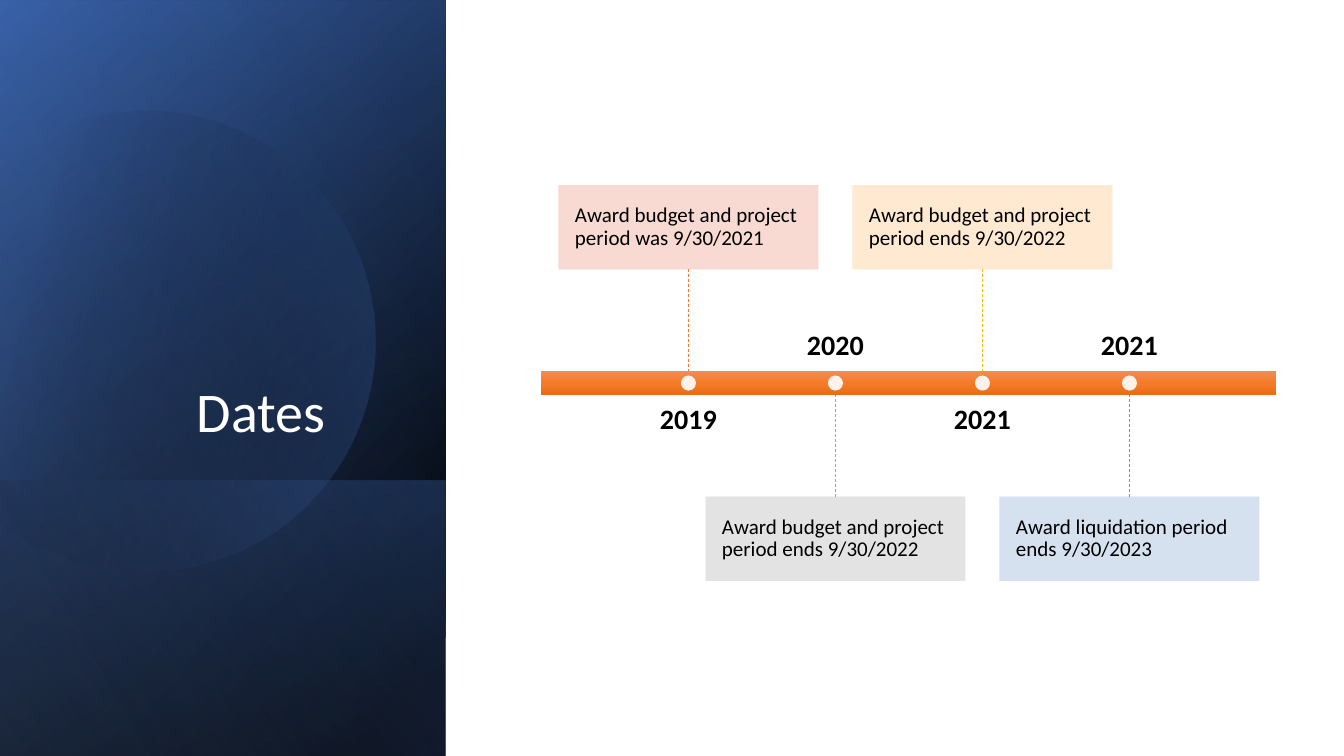
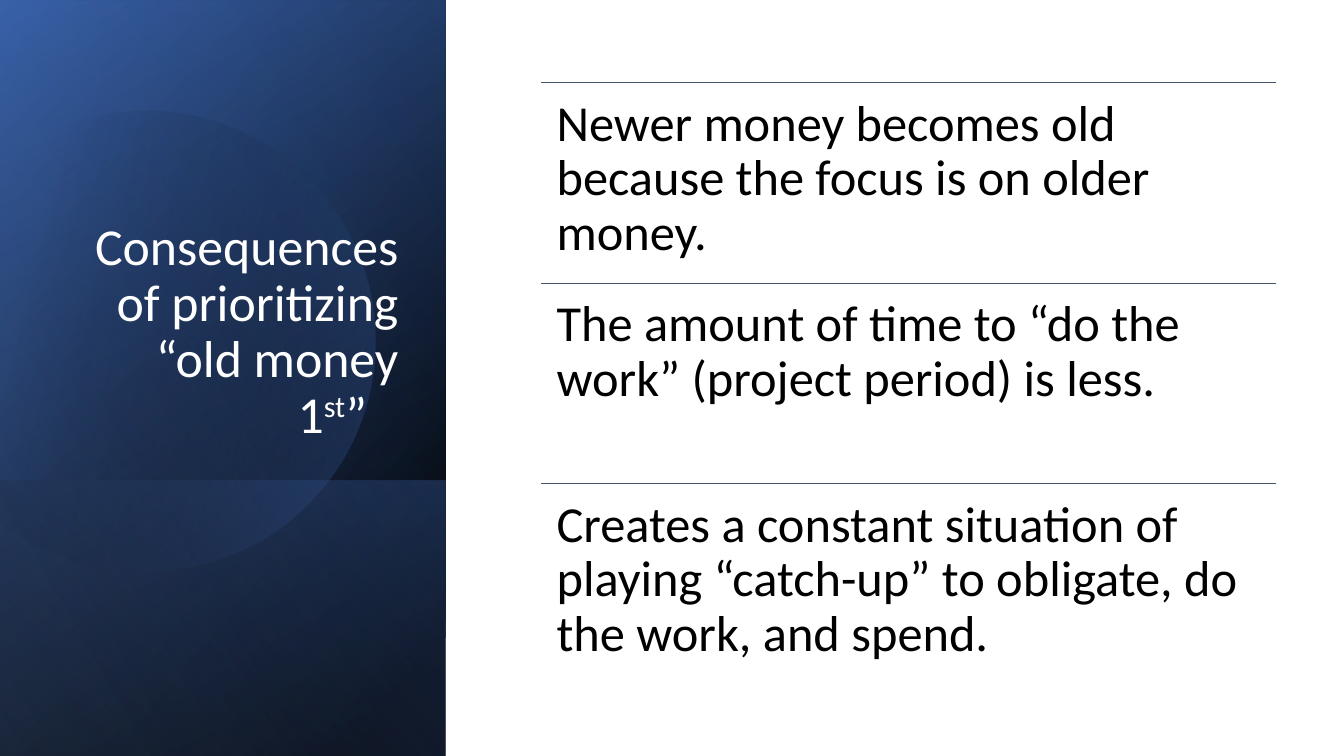
from math import cos, radians, sin

from lxml.etree import SubElement
from pptx import Presentation
from pptx.dml.color import RGBColor
from pptx.enum.dml import MSO_LINE
from pptx.enum.shapes import MSO_CONNECTOR, MSO_SHAPE
from pptx.enum.text import MSO_ANCHOR, PP_ALIGN
from pptx.oxml import parse_xml
from pptx.oxml.ns import nsdecls, qn
from pptx.util import Inches, Pt

FONT = "Calibri"
BLACK = RGBColor(0x00, 0x00, 0x00)
WHITE = RGBColor(0xFF, 0xFF, 0xFF)
NAVY = RGBColor(0x2F, 0x55, 0x97)
BLUE = RGBColor(0x44, 0x72, 0xC4)
LIGHT_BLUE = RGBColor(0x8F, 0xAA, 0xDC)
SLATE = RGBColor(0x44, 0x54, 0x6A)
ORANGE_TOP = RGBColor(0xF1, 0x8C, 0x57)
ORANGE_MIDDLE = RGBColor(0xF6, 0x7B, 0x28)
ORANGE_BOTTOM = RGBColor(0xE5, 0x6C, 0x19)
ORANGE = RGBColor(0xED, 0x7D, 0x31)
GRAY = RGBColor(0xA5, 0xA5, 0xA5)
GOLD = RGBColor(0xFF, 0xC0, 0x00)
SKY = RGBColor(0x5B, 0x9B, 0xD5)
PALE_ORANGE = RGBColor(0xF8, 0xD7, 0xCE)
PALE_GRAY = RGBColor(0xE1, 0xE1, 0xE1)
PALE_GOLD = RGBColor(0xFF, 0xE8, 0xCC)
PALE_SKY = RGBColor(0xD2, 0xDE, 0xEF)

CONTENT_LEFT, CONTENT_WIDTH = 5.37, 7.29
BAR_TOP, BAR_HEIGHT = 3.68, 0.24
CARD_WIDTH, CARD_HEIGHT = 2.57, 0.83
UPPER_CARD_TOP, LOWER_CARD_TOP = 1.84, 4.93
YEAR_WIDTH, YEAR_HEIGHT = 2.33, 0.67
UPPER_YEAR_TOP, LOWER_YEAR_TOP = 2.92, 4.02
DOT_SIZE = 0.15
ROW_TOP, ROW_HEIGHT = 0.82, 1.99

MILESTONES = [
    ("2019", "Award budget and project period was 9/30/2021", PALE_ORANGE, ORANGE),
    ("2020", "Award budget and project period ends 9/30/2022", PALE_GRAY, GRAY),
    ("2021", "Award budget and project period ends 9/30/2022", PALE_GOLD, GOLD),
    ("2021", "Award liquidation period ends 9/30/2023", PALE_SKY, SKY),
]
CONSEQUENCES = [
    "Newer money becomes old because the focus is on older money.",
    "The amount of time to “do the work” (project period) is less.",
    "Creates a constant situation of playing “catch-up” to obligate, do the work, and spend.",
]
PANEL_LAYERS = [
    (-1.54, 1.54, 7.5, [(8, BLACK, 100), (100, NAVY, 100)], 50),
    (-1.54, 1.55, 7.5, [(0, BLACK, 0), (99, BLUE, 46)], 30),
    (0.84, 3.93, 2.74, [(2, BLUE, 29), (100, BLACK, 30)], 130),
]
PANEL_GLOW = (-1.54, 1.54, 7.5, [(0, BLACK, 0), (99, LIGHT_BLUE, 11)], 120)
PANEL_WIDTH = 4.42
DISC_CENTER = (1.58, 3.34)
DISC_TURN = -16.1
DISC_START = (1.49, 1.1)
DISC_SEGMENTS = [
    [(2.46, 1.12), (3.35, 1.77), (3.63, 2.75)],
    [(3.98, 3.97), (3.28, 5.23), (2.07, 5.58)],
    [(1.31, 5.8), (0.53, 5.61), (-0.03, 5.14)],
    [(-0.15, 5.03)],
    [(-0.15, 1.75)],
    [(0, 1.61)],
    [(0.23, 1.42), (0.5, 1.28), (0.8, 1.19)],
    [(1.03, 1.13), (1.26, 1.1), (1.49, 1.1)],
]


def fill_gradient(shape, stops, angle):
    stop_xml = "".join(
        f'<a:gs pos="{position * 1000}"><a:srgbClr val="{color}">'
        f'<a:alpha val="{opacity * 1000}"/></a:srgbClr></a:gs>'
        for position, color, opacity in stops
    )
    gradient = parse_xml(
        f'<a:gradFill {nsdecls("a")} rotWithShape="1"><a:gsLst>{stop_xml}</a:gsLst>'
        f'<a:lin ang="{angle * 60000}" scaled="0"/></a:gradFill>'
    )
    shape.element.spPr[1].addnext(gradient)
    shape.line.fill.background()
    shape.shadow.inherit = False


def set_opacity(shape, percent):
    for color in shape.element.spPr.iter(qn("a:srgbClr")):
        SubElement(color, qn("a:alpha"), val=str(percent * 1000))


def add_block(page, kind, left, top, width, height, color=None, outline=None):
    block = page.shapes.add_shape(kind, Inches(left), Inches(top), Inches(width), Inches(height))
    block.shadow.inherit = False
    if color is not None:
        block.fill.solid()
        block.fill.fore_color.rgb = color
    if outline is None:
        block.line.fill.background()
    else:
        block.line.color.rgb = outline
        block.line.width = Pt(0.5)
    return block


def add_text_box(page, left, top, width, height):
    return page.shapes.add_textbox(Inches(left), Inches(top), Inches(width), Inches(height))


def write_text(box, text, size, color=BLACK, bold=False, align=PP_ALIGN.LEFT,
               anchor=MSO_ANCHOR.TOP, inset=(0, 0), superscript="", tail=""):
    frame = box.text_frame
    frame.word_wrap = True
    frame.vertical_anchor = anchor
    frame.margin_left = frame.margin_right = Inches(inset[0])
    frame.margin_top = frame.margin_bottom = Inches(inset[1])
    para = frame.paragraphs[0]
    para.alignment = align
    para.line_spacing = 0.9
    para._p.get_or_add_pPr().set("defTabSz", str(Inches(1)))
    first, *rest = text.split("\n")
    pieces = [(first, 0), *((line, 0) for line in rest), (superscript, 30), (tail, 0)]
    for index, (content, baseline) in enumerate(pieces):
        if 0 < index <= len(rest):
            para.add_line_break()
        if content:
            span = para.add_run()
            span.text = content
            span.font.name = FONT
            span.font.size = Pt(size)
            span.font.bold = bold
            span.font.color.rgb = color
            if baseline:
                span.font._element.set("baseline", str(baseline * 1000))


def add_line(page, start, end, color, dash=None):
    line = page.shapes.add_connector(
        MSO_CONNECTOR.STRAIGHT, *(Inches(value) for value in (*start, *end)))
    line.line.color.rgb = color
    line.line.width = Pt(0.5)
    if dash is not None:
        line.line.dash_style = dash
    SubElement(line.element.spPr, qn("a:effectLst"))
    return line


def add_panel_layer(page, left, top, length, stops, angle):
    layer = add_block(page, MSO_SHAPE.RECTANGLE, left, top, length, PANEL_WIDTH)
    layer.rotation = 90
    layer.element.spPr.xfrm.set("flipH", "1")
    fill_gradient(layer, stops, angle)


def turn(point, degrees):
    center_x, center_y = (Inches(value) for value in DISC_CENTER)
    x, y = point[0] - center_x, point[1] - center_y
    cosine, sine = cos(radians(degrees)), sin(radians(degrees))
    return (round(center_x + x * cosine - y * sine),
            round(center_y + x * sine + y * cosine))


def bend_segments(shape):
    outline = next(shape.element.iter(qn("a:path")))
    lines = iter(outline.findall(qn("a:lnTo")))
    for segment in DISC_SEGMENTS:
        first, *others = [next(lines) for _ in segment]
        if others:
            first.tag = qn("a:cubicBezTo")
            for other in others:
                first.append(other[0])
                outline.remove(other)


def add_disc(page):
    start, *points = [
        turn((Inches(x), Inches(y)), -DISC_TURN)
        for x, y in [DISC_START, *(point for segment in DISC_SEGMENTS for point in segment)]
    ]
    builder = page.shapes.build_freeform(*start)
    builder.add_line_segments(points, close=True)
    disc = builder.convert_to_shape()
    bend_segments(disc)
    center_x, center_y = turn((disc.left + disc.width / 2, disc.top + disc.height / 2), DISC_TURN)
    disc.left = round(center_x - disc.width / 2)
    disc.top = round(center_y - disc.height / 2)
    disc.rotation = DISC_TURN
    fill_gradient(disc, [(29, BLACK, 0), (100, BLUE, 43)], 30)


def add_page(deck, title, size, **title_parts):
    page = deck.slides.add_slide(deck.slide_layouts[6])
    for layer in PANEL_LAYERS:
        add_panel_layer(page, *layer)
    add_disc(page)
    add_panel_layer(page, *PANEL_GLOW)
    write_text(add_text_box(page, 0.64, 1.84, 3.41, 2.62), title, size, color=WHITE,
               align=PP_ALIGN.RIGHT, anchor=MSO_ANCHOR.BOTTOM, inset=(0.1, 0.05), **title_parts)
    return page


def add_milestone(page, center, upper, year, text, color, accent):
    card_top = UPPER_CARD_TOP if upper else LOWER_CARD_TOP
    card = add_block(page, MSO_SHAPE.RECTANGLE, center - CARD_WIDTH / 2, card_top,
                     CARD_WIDTH, CARD_HEIGHT, color, outline=color)
    set_opacity(card, 90)
    write_text(card, text, 15, anchor=MSO_ANCHOR.MIDDLE, inset=(0.16, 0.16))

    card_edge = card_top + CARD_HEIGHT if upper else card_top
    bar_edge = BAR_TOP if upper else BAR_TOP + BAR_HEIGHT
    stem = add_line(page, (center, card_edge), (center, bar_edge), accent, MSO_LINE.DASH)
    stem.begin_connect(card, 2 if upper else 0)

    year_box = add_text_box(page, center - YEAR_WIDTH / 2,
                            LOWER_YEAR_TOP if upper else UPPER_YEAR_TOP, YEAR_WIDTH, YEAR_HEIGHT)
    write_text(year_box, year, 20, bold=True, align=PP_ALIGN.CENTER,
               anchor=MSO_ANCHOR.TOP if upper else MSO_ANCHOR.BOTTOM)

    dot = add_block(page, MSO_SHAPE.OVAL, center - DOT_SIZE / 2,
                    BAR_TOP + (BAR_HEIGHT - DOT_SIZE) / 2, DOT_SIZE, DOT_SIZE, WHITE)
    set_opacity(dot, 90)


def add_timeline(page):
    bar = add_block(page, MSO_SHAPE.RECTANGLE, CONTENT_LEFT, BAR_TOP, CONTENT_WIDTH, BAR_HEIGHT)
    fill_gradient(bar, [(0, ORANGE_TOP, 100), (50, ORANGE_MIDDLE, 100),
                        (100, ORANGE_BOTTOM, 100)], 90)
    step = CONTENT_WIDTH / (len(MILESTONES) + 1)
    for index, milestone in enumerate(MILESTONES):
        add_milestone(page, CONTENT_LEFT + step * (index + 1), index % 2 == 0, *milestone)


def add_consequences(page):
    for index, text in enumerate(CONSEQUENCES):
        top = ROW_TOP + index * ROW_HEIGHT
        add_line(page, (CONTENT_LEFT, top), (CONTENT_LEFT + CONTENT_WIDTH, top), SLATE)
        row = add_text_box(page, CONTENT_LEFT, top, CONTENT_WIDTH, ROW_HEIGHT)
        write_text(row, text, 36, inset=(0.15, 0.15))


def main():
    deck = Presentation()
    deck.slide_width, deck.slide_height = Inches(13.33), Inches(7.5)
    add_timeline(add_page(deck, "Dates\t", 40))
    add_consequences(add_page(deck, "Consequences of prioritizing “old money\n1", 37,
                              superscript="st", tail="”\t"))
    deck.save("out.pptx")


if __name__ == "__main__":
    main()
